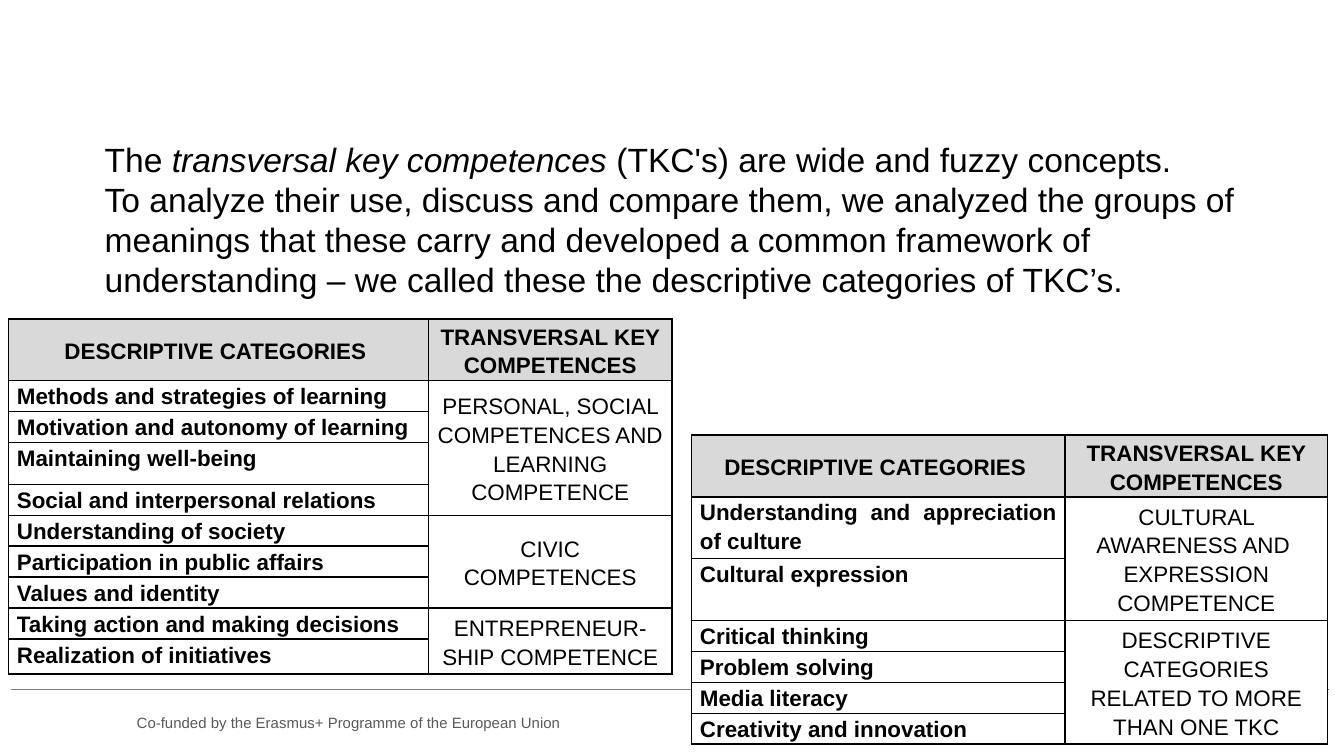
from lxml import etree
from pptx import Presentation
from pptx.dml.color import RGBColor
from pptx.enum.shapes import MSO_CONNECTOR
from pptx.enum.text import MSO_ANCHOR, PP_ALIGN
from pptx.oxml.ns import qn
from pptx.util import Pt

STRAIGHT = MSO_CONNECTOR.STRAIGHT
MIDDLE, TOP = MSO_ANCHOR.MIDDLE, MSO_ANCHOR.TOP
CENTER, JUSTIFY = PP_ALIGN.CENTER, PP_ALIGN.JUSTIFY
COLORS = {
    "text": "000000",
    "header": "D9D9D9",
    "body": "FFFFFF",
    "footer": "595959",
    "rule": "7F7F7F",
}
HEADINGS = ("DESCRIPTIVE CATEGORIES ", "TRANSVERSAL KEY COMPETENCES")
LEARNING_GROUPS = [
    ("PERSONAL, SOCIAL COMPETENCES AND LEARNING COMPETENCE", [
        ("Methods and strategies of learning", 12.2),
        ("Motivation and autonomy of learning ", 12.2),
        ("Maintaining well-being ", 22.4),
        ("Social and interpersonal relations", 12.2),
    ]),
    ("CIVIC COMPETENCES", [
        ("Understanding of society", 12.2),
        ("Participation in public affairs", 12.2),
        ("Values and identity ", 12.2),
    ]),
    ("ENTREPRENEUR-SHIP COMPETENCE", [
        ("Taking action and making decisions", 16.6),
        ("Realization of initiatives ", 18.7),
    ]),
]
CULTURE_GROUPS = [
    ("CULTURAL AWARENESS AND \vEXPRESSION COMPETENCE", [
        ("Understanding and appreciation of culture", 12.2),
        ("Cultural expression", 18.7),
    ]),
    ("DESCRIPTIVE CATEGORIES RELATED TO MORE THAN ONE TKC", [
        ("Critical thinking ", 16.6),
        ("Problem solving", 16.6),
        ("Media literacy", 16.6),
        ("Creativity and innovation", 16.6),
    ]),
]


def rgb(name):
    """Return the named colour."""
    return RGBColor.from_string(COLORS[name])


def style_run(run, size, color="text", bold=None, italic=None):
    """Format one run of text."""
    run.font.name = "Arial"
    run.font.size = Pt(size)
    run.font.color.rgb = rgb(color)
    run.font.bold = bold
    run.font.italic = italic


def add_textbox(slide, left, top, width, height):
    """Add a wrapping text box and return its text frame."""
    frame = slide.shapes.add_textbox(Pt(left), Pt(top), Pt(width), Pt(height)).text_frame
    frame.word_wrap = True
    return frame


def add_footer(slide, left, top, width):
    """Draw the footer rule with the funding note below it."""
    rule = slide.shapes.add_connector(STRAIGHT, Pt(left), Pt(top), Pt(left + width), Pt(top))
    rule.line.color.rgb = rgb("rule")
    rule.line.width = Pt(0.25)
    etree.SubElement(rule._element.spPr, qn("a:effectLst"))
    note = add_textbox(slide, left + 60.5, top + 9.4, 314.6, 17)
    note.text = "Co-funded by the Erasmus+ Programme of the European Union"
    style_run(note.paragraphs[0].runs[0], 8, "footer")


def add_introduction(slide, left, top, width, height):
    """Write the introduction to the competences."""
    frame = add_textbox(slide, left, top, width, height)
    opening = frame.paragraphs[0]
    for words, italic in [
        ("The ", False),
        ("transversal key competences ", True),
        ("(TKC's) are wide and fuzzy concepts.", False),
    ]:
        run = opening.add_run()
        run.text = words
        style_run(run, 18, italic=italic)
    method = frame.add_paragraph()
    method.text = (
        "To analyze their use, discuss and compare them, we analyzed the groups of "
        "meanings that these carry and developed a common framework of understanding "
        "– we called these the descriptive categories of TKC’s."
    )
    style_run(method.runs[0], 18)


def add_borders(cell):
    """Draw a thin line on every side of a cell."""
    properties = cell._tc.get_or_add_tcPr()
    for side in ("a:lnL", "a:lnR", "a:lnT", "a:lnB"):
        line = etree.SubElement(properties, qn(side), w=str(Pt(1)))
        fill = etree.SubElement(line, qn("a:solidFill"))
        etree.SubElement(fill, qn("a:srgbClr"), val=COLORS["text"])


def fill_cell(cell, words, fill="body", bold=True, align=CENTER, anchor=MIDDLE):
    """Write and format one table cell."""
    cell.margin_left = cell.margin_right = Pt(4.5)
    cell.margin_top = cell.margin_bottom = 0
    cell.vertical_anchor = anchor
    add_borders(cell)
    cell.fill.solid()
    cell.fill.fore_color.rgb = rgb(fill)
    if not words:
        return
    cell.text_frame.text = words
    paragraph = cell.text_frame.paragraphs[0]
    paragraph.alignment = align
    paragraph.line_spacing = 1.15
    paragraph.space_after = Pt(10)
    for run in paragraph.runs:
        style_run(run, 12, bold=bold)


def add_competence_table(slide, left, top, widths, groups):
    """Draw a table of categories grouped by competence."""
    heights = [24.5] + [height for _, rows in groups for _, height in rows]
    table = slide.shapes.add_table(
        len(heights), len(widths), Pt(left), Pt(top), Pt(sum(widths)), Pt(sum(heights))
    ).table
    table.first_row = table.horz_banding = False
    for column, width in zip(table.columns, widths):
        column.width = Pt(width)
    for row, height in zip(table.rows, heights):
        row.height = Pt(height)
    for column, heading in enumerate(HEADINGS):
        fill_cell(table.cell(0, column), heading, "header")
    start = 1
    for competence, rows in groups:
        for offset, (category, _) in enumerate(rows):
            fill_cell(table.cell(start + offset, 0), category, align=JUSTIFY, anchor=TOP)
            fill_cell(table.cell(start + offset, 1), "" if offset else competence, bold=False)
        table.cell(start, 1).merge(table.cell(start + len(rows) - 1, 1))
        start += len(rows)


def main():
    """Build and save the slide."""
    deck = Presentation()
    deck.slide_width, deck.slide_height = Pt(720), Pt(405)
    slide = deck.slides.add_slide(deck.slide_layouts[6])
    add_footer(slide, 5.7, 369.3, 706.5)
    add_introduction(slide, 49, 70.6, 630.7, 116.6)
    add_competence_table(slide, 4.6, 170.8, (225, 130.5), LEARNING_GROUPS)
    add_competence_table(slide, 370.5, 233, (200.2, 140.4), CULTURE_GROUPS)
    deck.save("out.pptx")


if __name__ == "__main__":
    main()
